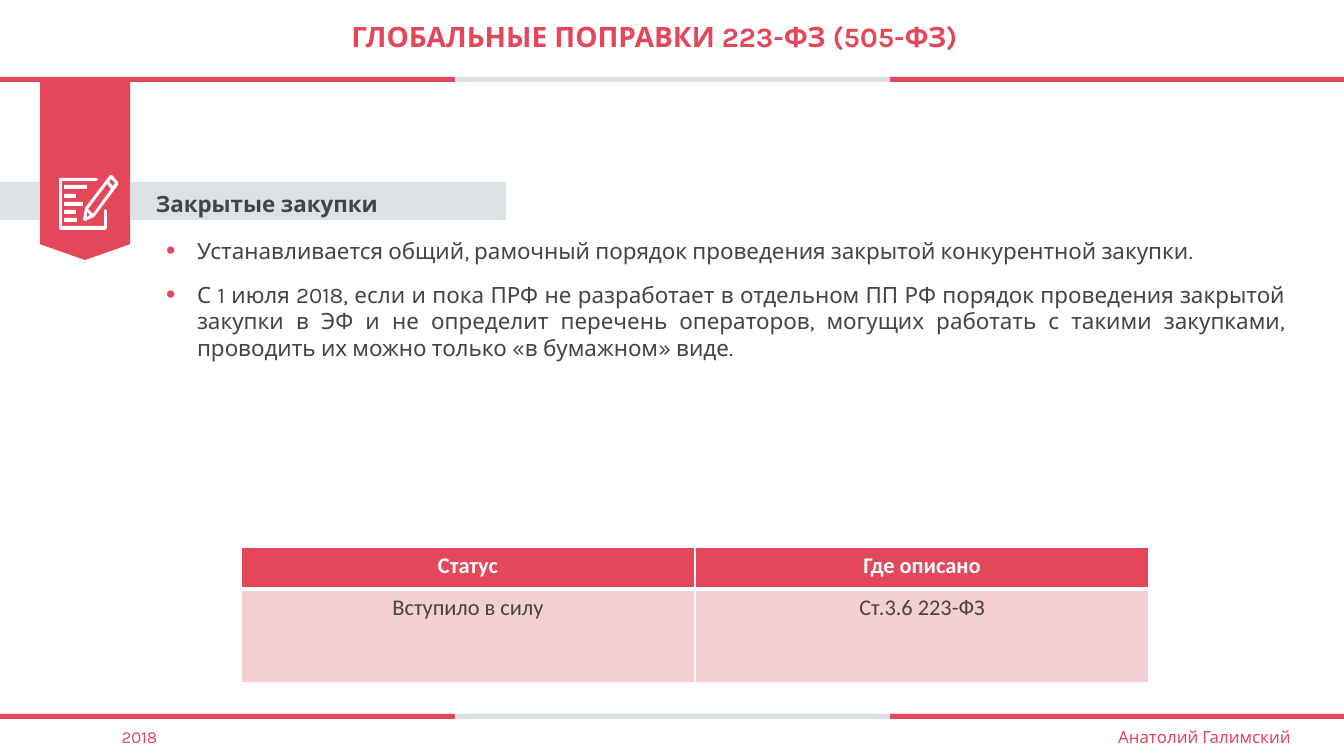
from lxml import etree
from pptx import Presentation
from pptx.dml.color import RGBColor
from pptx.enum.shapes import MSO_SHAPE as SHAPE
from pptx.enum.text import MSO_ANCHOR as ANCHOR, MSO_AUTO_SIZE as AUTO, PP_ALIGN as ALIGN
from pptx.oxml import parse_xml
from pptx.oxml.ns import nsdecls, qn
from pptx.util import Pt

RED = RGBColor(0xE4, 0x46, 0x5A)
GREY = RGBColor(0xDB, 0xE1, 0xE4)
PINK = RGBColor(0xF5, 0xCF, 0xD2)
DARK = RGBColor(0x44, 0x44, 0x44)
WHITE = RGBColor(0xFF, 0xFF, 0xFF)
SCALE = 12192000 / 1344  # EMU per px


def px(*lengths):
    return [round(n * SCALE) for n in lengths]


def write(p, text, size=16, color=DARK, font="Karla", bold=False, align=ALIGN.LEFT,
          before=0, spacing=1.0):
    p.alignment, p.space_before, p.line_spacing = align, Pt(before), spacing
    r = p.add_run()
    r.text = text
    r.font.name, r.font.size, r.font.bold = font, Pt(size), bold
    r.font.color.rgb = color


prs = Presentation()
prs.slide_width, prs.slide_height = px(1344, 756)
s = prs.slides.add_slide(prs.slide_layouts[1])
title, body = s.placeholders[0], s.placeholders[1]

# Top and bottom stripes, heading bar, ribbon
blocks = [(SHAPE.RECTANGLE, x, y, w, 5, color) for y in (77, 714)
          for x, w, color in ((0, 455, RED), (890, 454, RED), (455, 435, GREY))]
blocks += [(SHAPE.RECTANGLE, 0, 182, 506, 38, GREY),
           (SHAPE.PENTAGON, -4, 126, 178, 90, RED)]
for kind, x, y, w, h, color in blocks:
    sp = s.shapes.add_shape(kind, *px(x, y, w, h))
    sp.shadow.inherit = False
    sp.fill.solid()
    sp.fill.fore_color.rgb = color
    sp.line.fill.background()
ribbon = sp
ribbon.adjustments[0] = 0.175
ribbon.rotation = 90

# Page and pencil icon
page = [(37, 4), (39, 5), (39, 6), (37, 7), (3, 7), (3, 52), (45, 52), (45, 37), (46, 35),
        (48, 37), (48, 54), (46, 56), (1, 56), (0, 54), (0, 5), (1, 4)]
pencil = [(53, 1), (59, 8), (59, 11), (35, 43), (26, 47), (24, 46), (26, 34), (51, 1)]
pencil_gaps = [[(29, 35), (34, 40), (52, 15), (48, 10)],
               [(31, 41), (28, 38), (28, 43)],
               [(56, 9), (52, 5), (50, 8), (54, 12)]]
text_lines = [[(5, y), (right, y), (right, y + 4), (5, y + 4)]
              for y, right in zip((11, 20, 28, 36, 44), (28, 17, 24, 17, 18))]
builder = s.shapes.build_freeform(*page[0], scale=SCALE)
builder.add_line_segments(page[1:])
for outline in [pencil, *pencil_gaps, *text_lines]:
    builder.move_to(*outline[0])
    builder.add_line_segments(outline[1:])
icon = builder.convert_to_shape(*px(59, 174))
icon.shadow.inherit = False
icon.fill.solid()
icon.fill.fore_color.rgb = WHITE
icon.line.fill.background()

# Title
title.left, title.top, title.width, title.height = px(199, 0, 911, 77)
tf = title.text_frame
tf.auto_size, tf.vertical_anchor = AUTO.NONE, ANCHOR.MIDDLE
write(tf.paragraphs[0], "ГЛОБАЛЬНЫЕ ПОПРАВКИ 223-ФЗ (505-ФЗ)", size=20, color=RED,
      bold=True, align=ALIGN.CENTER, spacing=0.9)

# Heading and footer texts
labels = [
    (156, 190, 489, 27, 0, "Закрытые закупки", dict(bold=True)),
    (1065, 722, 279, 30, 5, "Анатолий Галимский", dict(size=12, color=RED, align=ALIGN.CENTER)),
    (0, 722, 279, 30, 5, "2018", dict(size=12, color=RED, align=ALIGN.CENTER)),
]
for x, y, w, h, inset, text, style in labels:
    tf = s.shapes.add_textbox(*px(x, y, w, h)).text_frame
    tf.word_wrap = True
    tf.margin_left, tf.margin_right, tf.margin_top, tf.margin_bottom = px(
        2 * inset, 2 * inset, inset, inset)
    write(tf.paragraphs[0], text, **style)

# Bulleted list
body.left, body.top, body.width, body.height = px(156, 232, 1140, 136)
tf = body.text_frame
tf.auto_size = AUTO.NONE
items = [
    "Устанавливается общий, рамочный порядок проведения закрытой конкурентной закупки.",
    "С 1 июля 2018, если и пока ПРФ не разработает в отдельном ПП РФ порядок проведения "
    "закрытой закупки в ЭФ и не определит перечень операторов, могущих работать с такими "
    "закупками, проводить их можно только «в бумажном» виде.",
]
indent = px(31)[0]
for i, text in enumerate(items):
    p = tf.add_paragraph() if i else tf.paragraphs[0]
    pPr = p._p.get_or_add_pPr()
    pPr.set("marL", str(indent))
    pPr.set("indent", str(-indent))
    color = etree.SubElement(pPr, qn("a:buClr"))
    etree.SubElement(color, qn("a:srgbClr"), val=str(RED))
    etree.SubElement(pPr, qn("a:buSzPct"), val="120000")
    etree.SubElement(pPr, qn("a:buChar"), char="•")
    write(p, text, align=ALIGN.JUSTIFY, before=12 if i else 0)

# Status table
rows = [("Статус", "Где описано"), ("Вступило в силу", "Ст.3.6 223-ФЗ")]
table = s.shapes.add_table(2, 2, *px(241, 547, 908, 136)).table
for row, height in zip(table.rows, px(42, 94)):
    row.height = height
for column in table.columns:
    column.width = px(454)[0]
for i, texts in enumerate(rows):
    for j, text in enumerate(texts):
        cell = table.cell(i, j)
        cell.fill.solid()
        cell.fill.fore_color.rgb = PINK if i else RED
        write(cell.text_frame.paragraphs[0], text, font="Calibri", bold=not i,
              color=DARK if i else WHITE, align=ALIGN.CENTER)
        thick_side = "T" if i else "B"
        for n, side in enumerate("LRTB"):
            width = Pt(3 if side == thick_side else 1)
            cell._tc.get_or_add_tcPr().insert(n, parse_xml(
                f'<a:ln{side} {nsdecls("a")} w="{width}"><a:solidFill>'
                f'<a:srgbClr val="{WHITE}"/></a:solidFill></a:ln{side}>'))

prs.save("out.pptx")
